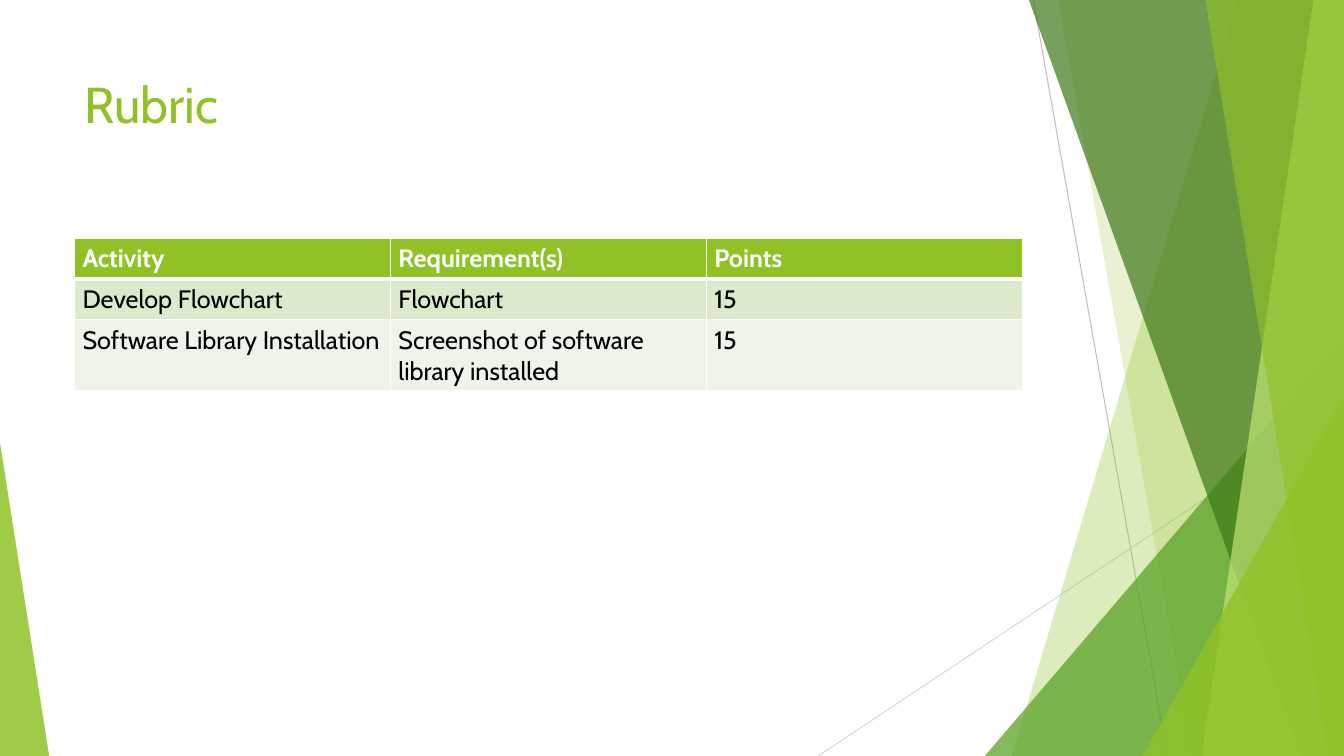
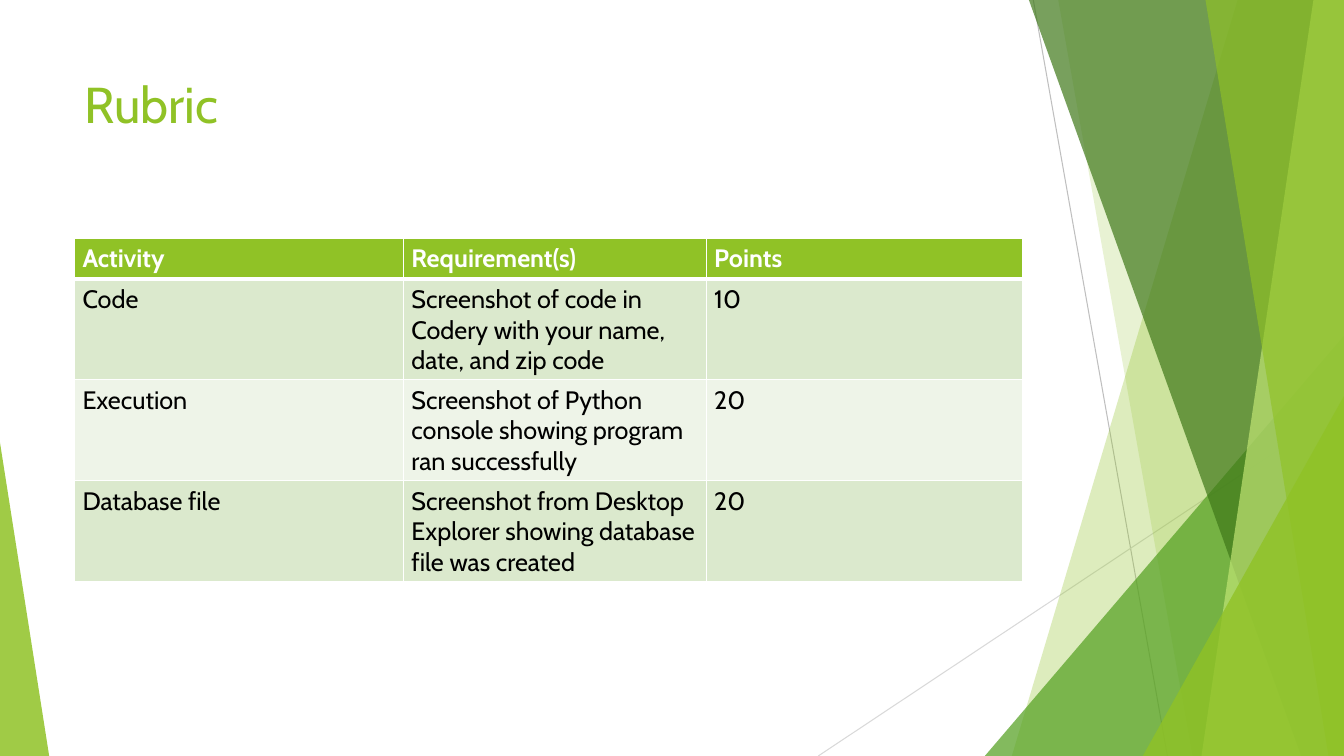
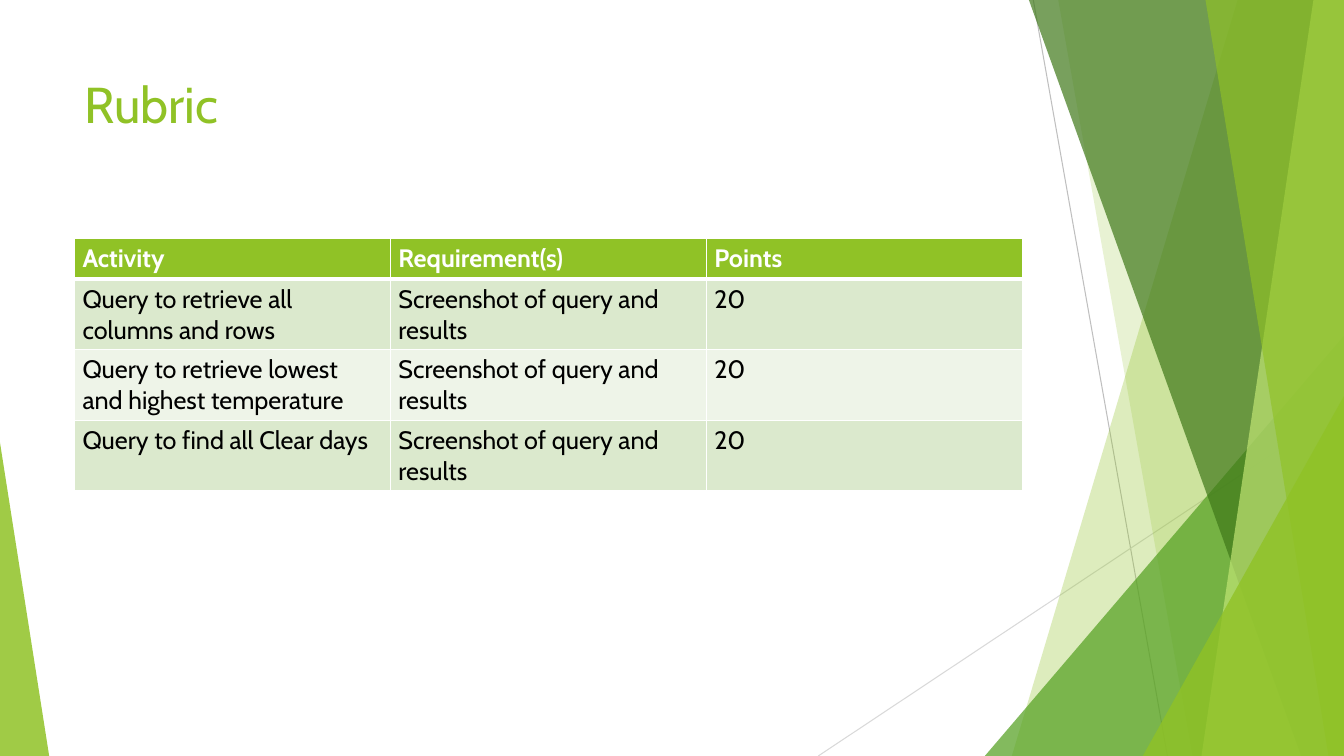
"""Build three rubric slides with a faceted green backdrop."""
from lxml.etree import SubElement
from pptx import Presentation
from pptx.dml.color import RGBColor
from pptx.enum.shapes import MSO_CONNECTOR as CONN, MSO_SHAPE as SHAPE
from pptx.oxml.ns import qn
from pptx.util import Cm, Pt

W, H = 33.87, 19.05
LEFT, WIDTH = 1.88, 23.88
TITLE_TOP, TITLE_H = 1.71, 3.66
TABLE_TOP, ROW_H = 6.0, 1.03
FONT = "Cabin"
COLORS = {
    "lime": "90C226", "green": "54A021", "forest": "3F7819", "pale": "C0E474",
    "gray": "BFBFBF", "silver": "D9D9D9", "white": "FFFFFF", "black": "000000",
    "band1": "DBE9CD", "band2": "EEF4E8",
}

HEADER = ("Activity", "Requirement(s)", "Points")
EVEN = (WIDTH / 3,) * 3
RUBRICS = [
    (EVEN, [
        ("Develop Flowchart", "Flowchart", "15"),
        ("Software Library Installation", "Screenshot of software library installed", "15"),
    ]),
    ((8.29, 7.63, 7.96), [
        ("Code", "Screenshot of code in Codery with your name, date, and zip code", "10"),
        ("Execution", "Screenshot of Python console showing program ran successfully", "20"),
        ("Database file", "Screenshot from Desktop Explorer showing database file was created", "20"),
    ]),
    (EVEN, [
        ("Query to retrieve all columns and rows", "Screenshot of query and results", "20"),
        ("Query to retrieve lowest and highest temperature", "Screenshot of query and results", "20"),
        ("Query to find all Clear days", "Screenshot of query and results", "20"),
    ]),
]

RAYS = [(26.04, 0, 29.42, H, "gray"), (W, 10.24, 20.62, H, "silver")]
FACETS = [
    ("panel", (31.19, 25.5), "lime", 30),
    ("panel", (26.67, 30.05), "lime", 20),
    ("triangle", (24.82, 8.46, 9.05, 1), "green", 72),
    ("panel", (25.93, 32.79), "forest", 70),
    ("panel", (33.1, 30.28), "pale", 70),
    ("panel", (30.38, 33.48), "lime", 65),
    ("triangle", (28.8, 9.98, 5.07, 1), "lime", 80),
    ("triangle", (0, 11.15, 1.24, 0), "lime", 85),
]


def rgb(name):
    return RGBColor.from_string(COLORS[name])


def style(p, size, color, bold=False):
    for r in p.runs:
        r.font.name, r.font.size, r.font.bold = FONT, Pt(size), bold
        r.font.color.rgb = rgb(color)


def add_panel(s, top_x, bottom_x):
    fb = s.shapes.build_freeform(Cm(top_x), 0)
    fb.add_line_segments([(Cm(W), 0), (Cm(W), Cm(H)), (Cm(bottom_x), Cm(H))])
    return fb.convert_to_shape()


def add_triangle(s, x, y, w, apex):
    sp = s.shapes.add_shape(SHAPE.ISOSCELES_TRIANGLE, Cm(x), Cm(y), Cm(w), Cm(H - y))
    sp.adjustments[0] = apex
    return sp


def add_backdrop(s):
    for x1, y1, x2, y2, color in RAYS:
        ray = s.shapes.add_connector(CONN.STRAIGHT, Cm(x1), Cm(y1), Cm(x2), Cm(y2))
        ray.line.color.rgb, ray.line.width = rgb(color), Pt(0.75)
        SubElement(ray._element.spPr, qn("a:effectLst"))
    makers = {"panel": add_panel, "triangle": add_triangle}
    for kind, geometry, color, opacity in FACETS:
        sp = makers[kind](s, *geometry)
        sp.shadow.inherit = False
        sp.line.fill.background()
        sp.fill.solid()
        sp.fill.fore_color.rgb = rgb(color)
        clr = sp._element.spPr.find(qn("a:solidFill"))[0]
        SubElement(clr, qn("a:alpha"), val=str(opacity * 1000))


def add_title(s, text):
    tf = s.shapes.add_textbox(Cm(LEFT), Cm(TITLE_TOP), Cm(WIDTH), Cm(TITLE_H)).text_frame
    tf.word_wrap = True
    tf.text = text
    style(tf.paragraphs[0], 36, "lime")


def set_borders(cell, **widths):
    tcPr = cell._tc.get_or_add_tcPr()
    for side in "LRTB":
        ln = SubElement(tcPr, qn(f"a:ln{side}"), w=str(Pt(widths.get(side, 1))))
        SubElement(SubElement(ln, qn("a:solidFill")), qn("a:srgbClr"), val=COLORS["white"])


def add_rubric(s, widths, rows):
    rows = [HEADER, *rows]
    table = s.shapes.add_table(len(rows), len(HEADER), Cm(LEFT), Cm(TABLE_TOP),
                               Cm(WIDTH), Cm(ROW_H * len(rows))).table
    table.horz_banding = False
    for column, width in zip(table.columns, widths):
        column.width = Cm(width)
    for i, row in enumerate(rows):
        fill = "lime" if i == 0 else ("band2", "band1")[i % 2]
        heavy = ({"B": 3}, {"T": 3})[i] if i < 2 else {}
        for j, text in enumerate(row):
            cell = table.cell(i, j)
            cell.margin_left = cell.margin_right = Cm(0.2)
            set_borders(cell, **heavy)
            cell.fill.solid()
            cell.fill.fore_color.rgb = rgb(fill)
            cell.text_frame.text = text
            style(cell.text_frame.paragraphs[0], 18, "black" if i else "white", i == 0)


def main():
    prs = Presentation()
    prs.slide_width, prs.slide_height = Cm(W), Cm(H)
    for widths, rows in RUBRICS:
        s = prs.slides.add_slide(prs.slide_layouts[6])
        add_backdrop(s)
        add_title(s, "Rubric")
        add_rubric(s, widths, rows)
    prs.save("out.pptx")


if __name__ == "__main__":
    main()
